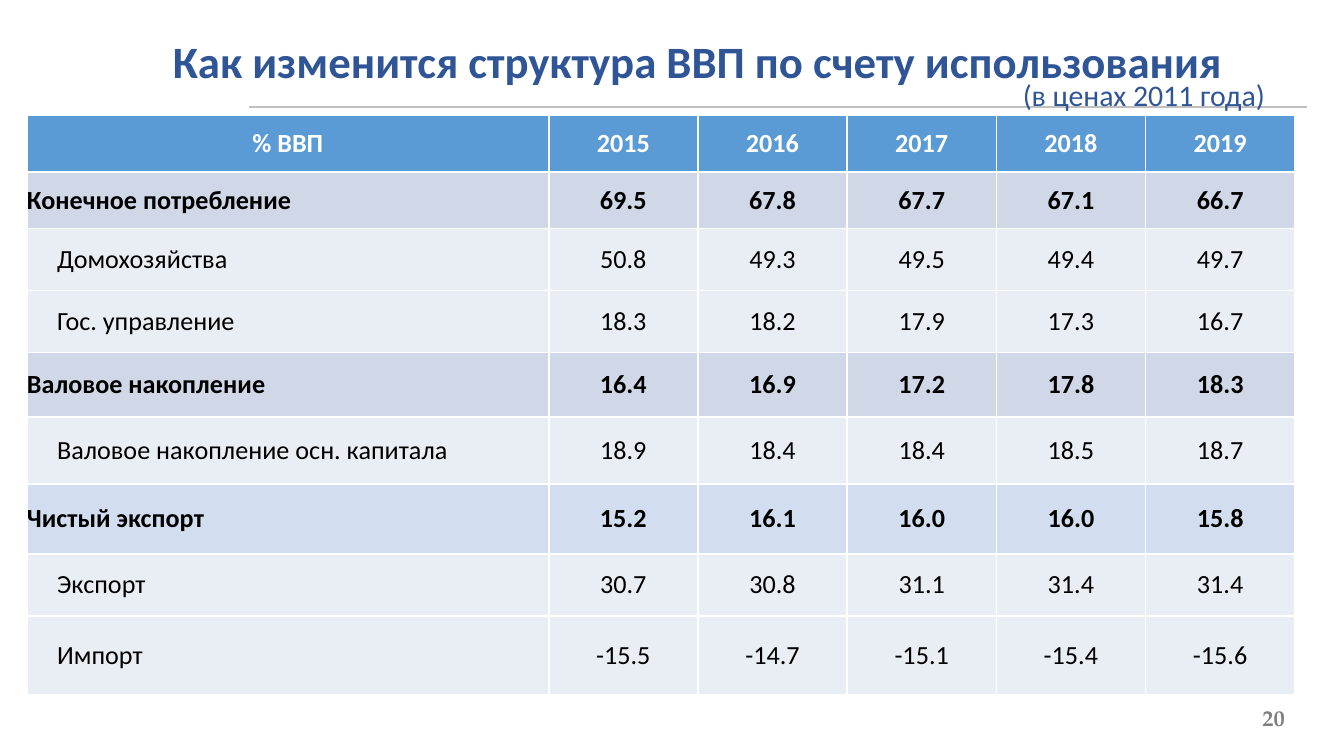
from dataclasses import dataclass

from lxml import etree
from pptx import Presentation
from pptx import util as u
from pptx.dml.color import RGBColor
from pptx.enum import shapes, text
from pptx.oxml import ns


@dataclass(frozen=True)
class Theme:
    """Colours, fonts and type sizes of the slide."""
    blue: str = "2F5597"
    head: str = "5B9BD5"
    group: str = "D0D8E8"
    net: str = "D2DEEF"
    item: str = "E9EDF4"
    rule: str = "BFBFBF"
    grey: str = "7F7F7F"
    black: str = "000000"
    white: str = "FFFFFF"
    sans: str = "Calibri"
    serif: str = "TeX Gyre Pagella"
    title: int = 24
    note: int = 16
    cell: int = 14
    page: int = 12


THEME = Theme()
ALIGN = text.PP_ALIGN
WIDTHS = [9.86] + [2.82] * 5
ROWS = [
    (1.07, THEME.head, "% ВВП", "2015 2016 2017 2018 2019"),
    (1.07, THEME.group, "Конечное потребление", "69.5 67.8 67.7 67.1 66.7"),
    (1.17, THEME.item, "Домохозяйства", "50.8 49.3 49.5 49.4 49.7"),
    (1.17, THEME.item, "Гос. управление", "18.3 18.2 17.9 17.3 16.7"),
    (1.22, THEME.group, "Валовое накопление", "16.4 16.9 17.2 17.8 18.3"),
    (1.27, THEME.item, "Валовое накопление осн. капитала", "18.9 18.4 18.4 18.5 18.7"),
    (1.32, THEME.net, "Чистый экспорт", "15.2 16.1 16.0 16.0 15.8"),
    (1.17, THEME.item, "Экспорт", "30.7 30.8 31.1 31.4 31.4"),
    (1.5, THEME.item, "Импорт", "-15.5 -14.7 -15.1 -15.4 -15.6"),
]


def write(frame, words, size, color, bold=False, align=ALIGN.LEFT, face=THEME.sans):
    """Put one styled paragraph in a text frame and return it."""
    frame.text = words
    para = frame.paragraphs[0]
    para.alignment = align
    font = para.font
    font.name, font.size, font.bold = face, u.Pt(size), bold
    font.color.rgb = RGBColor.from_string(color)
    return para


def add_title(slide, words):
    """Place the title and indent its first line."""
    title = slide.shapes.title
    title.left, title.top = u.Cm(0.66), u.Cm(0.51)
    title.width, title.height = u.Cm(23.77), u.Cm(1.27)
    frame = title.text_frame
    frame.auto_size = text.MSO_AUTO_SIZE.NONE
    frame.vertical_anchor = text.MSO_ANCHOR.TOP
    para = write(frame, words, THEME.title, THEME.blue, True, ALIGN.CENTER)
    para._p.get_or_add_pPr().set("indent", str(u.Cm(1.27)))


def add_label(slide, box, inset=None):
    """Add a wrapping text box and return its frame."""
    frame = slide.shapes.add_textbox(*map(u.Cm, box)).text_frame
    frame.word_wrap = True
    if inset is not None:
        frame.margin_left = frame.margin_right = u.Cm(inset)
        frame.margin_top = frame.margin_bottom = u.Cm(inset)
        frame.vertical_anchor = text.MSO_ANCHOR.MIDDLE
    return frame


def add_rule(slide):
    """Draw the thin line under the title."""
    ends = map(u.Cm, (4.7, 2.03, 24.71, 2.03))
    rule = slide.shapes.add_connector(shapes.MSO_CONNECTOR.STRAIGHT, *ends)
    rule.line.color.rgb = RGBColor.from_string(THEME.rule)
    rule.line.width = u.Pt(1)
    etree.SubElement(rule._element.spPr, ns.qn("a:effectLst"))


def edge(cell):
    """Give a cell white borders on all sides."""
    props = cell._tc.get_or_add_tcPr()
    for side in ("lnL", "lnR", "lnT", "lnB"):
        line = etree.SubElement(props, ns.qn(f"a:{side}"), w=str(u.Pt(1)))
        fill = etree.SubElement(line, ns.qn("a:solidFill"))
        etree.SubElement(fill, ns.qn("a:srgbClr"), val=THEME.white)


def fill_cell(cell, words, shade, first):
    """Style one table cell by the shade of its row and its column."""
    head, item = shade == THEME.head, shade == THEME.item
    edge(cell)
    cell.fill.solid()
    cell.fill.fore_color.rgb = RGBColor.from_string(shade)
    cell.margin_left = u.Cm(0.57 if first and item else 0)
    cell.margin_right = cell.margin_top = cell.margin_bottom = 0
    cell.vertical_anchor = text.MSO_ANCHOR.MIDDLE
    write(cell.text_frame, words, THEME.cell, THEME.white if head else THEME.black,
          not item, ALIGN.LEFT if first and not head else ALIGN.CENTER)


def add_grid(slide):
    """Build the table of shares by year."""
    box = (0.51, 2.18, sum(WIDTHS), sum(row[0] for row in ROWS))
    grid = slide.shapes.add_table(len(ROWS), len(WIDTHS), *map(u.Cm, box)).table
    grid.horz_banding = False
    for col, width in zip(grid.columns, WIDTHS):
        col.width = u.Cm(width)
    for row, (height, shade, name, years) in zip(grid.rows, ROWS):
        row.height = u.Cm(height)
        for i, words in enumerate([name, *years.split()]):
            fill_cell(row.cells[i], words, shade, i == 0)


def main():
    """Build and save the slide."""
    deck = Presentation()
    deck.slide_width, deck.slide_height = u.Cm(25.4), u.Cm(14.29)
    slide = deck.slides.add_slide(deck.slide_layouts[5])
    add_title(slide, "Как изменится структура ВВП по счету использования")
    add_rule(slide)
    page = add_label(slide, (23.06, 13.44, 1.22, 0.25), 0)
    write(page, "20", THEME.page, THEME.grey, True, ALIGN.RIGHT, THEME.serif)
    add_grid(slide)
    note = add_label(slide, (19.08, 1.32, 5.38, 0.94))
    write(note, "(в ценах 2011 года)", THEME.note, THEME.blue)
    deck.save("out.pptx")


if __name__ == "__main__":
    main()
